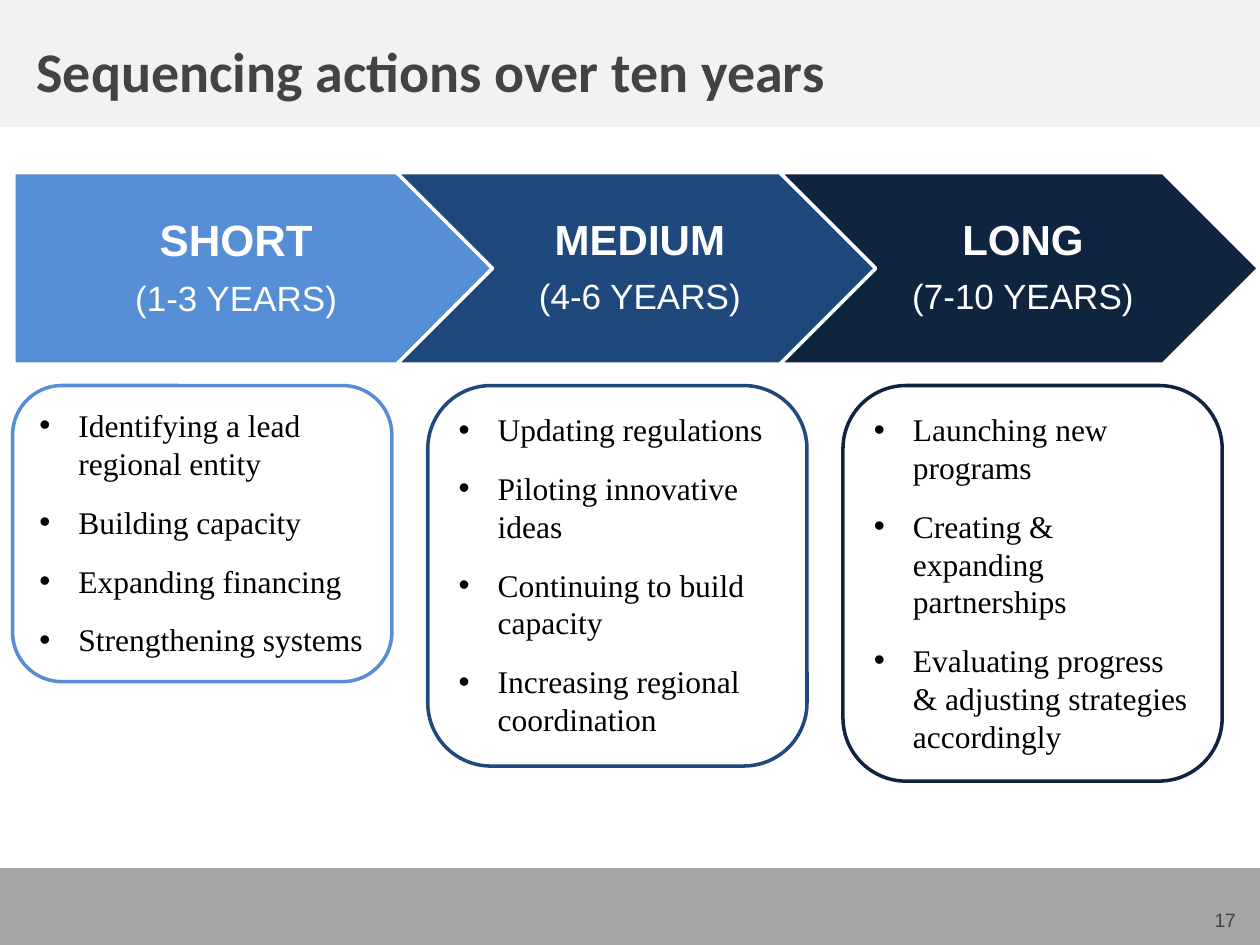
import pptx
import pptx.dml.color
import pptx.enum.shapes
import pptx.enum.text
import pptx.util
from lxml import etree
from pptx.oxml.ns import qn

Inches = pptx.util.Inches
Pt = pptx.util.Pt
Shape = pptx.enum.shapes.MSO_SHAPE
Anchor = pptx.enum.text.MSO_ANCHOR
Align = pptx.enum.text.PP_ALIGN
AutoSize = pptx.enum.text.MSO_AUTO_SIZE


def color(value):
    return pptx.dml.color.RGBColor.from_string(value)


class SlideBuilder:
    sans = "Arial"
    serif = "Times New Roman"
    heading = "Calibri"
    gray = "424342"
    white = "FFFFFF"

    def __init__(self, page):
        self.page = page

    def font(self, para, name, size, value, bold=False):
        for span in para.runs:
            span.font.name = name
            span.font.size = Pt(size)
            span.font.bold = bold
            span.font.color.rgb = color(value)

    def frame(self, box, anchor, insets=(0.1, 0.05, 0.1, 0.05)):
        frame = box.text_frame
        frame.word_wrap = True
        frame.auto_size = AutoSize.NONE
        frame.vertical_anchor = anchor
        (frame.margin_left, frame.margin_top,
         frame.margin_right, frame.margin_bottom) = map(Inches, insets)
        return frame

    def shape(self, kind, left, top, width, height, fill, line=None):
        box = self.page.shapes.add_shape(
            kind, Inches(left), Inches(top), Inches(width), Inches(height))
        box.shadow.inherit = False
        box.fill.solid()
        box.fill.fore_color.rgb = color(fill)
        if line:
            box.line.color.rgb = color(line)
            box.line.width = Pt(2)
        else:
            box.line.fill.background()
        return box

    def title(self, text, left, top, width, height):
        box = self.page.shapes.title
        box.left, box.top = Inches(left), Inches(top)
        box.width, box.height = Inches(width), Inches(height)
        frame = self.frame(box, Anchor.TOP, (0, 0, 0, 0))
        frame.text = text
        para = frame.paragraphs[0]
        para.alignment = Align.LEFT
        self.font(para, self.heading, 32, self.gray, True)
        box.element.getparent().append(box.element)

    def page_number(self, text, left, top, width, height):
        box = self.page.shapes.add_textbox(
            Inches(left), Inches(top), Inches(width), Inches(height))
        frame = self.frame(box, Anchor.BOTTOM, (0, 0, 0, 0))
        frame.text = text
        para = frame.paragraphs[0]
        para.alignment = Align.RIGHT
        self.font(para, self.sans, 11, self.gray)

    def phase(self, kind, left, fill, name, years, name_size, inset):
        box = self.shape(kind, left, 1.37, 3.8, 1.52, fill, self.white)
        frame = self.frame(box, Anchor.MIDDLE, (inset, 0.07, 0.04, 0.07))
        frame.text = f"{name}\n{years}"
        for para, size, bold in zip(frame.paragraphs, (name_size, 20), (True, False)):
            para.alignment = Align.CENTER
            para.line_spacing = 0.9
            para.space_after = Pt(size * 0.35)
            self.font(para, self.sans, size, self.white, bold)

    def card(self, left, height, line, actions):
        box = self.shape(Shape.ROUNDED_RECTANGLE, left, 3.06, 3.01, height, self.white, line)
        frame = self.frame(box, Anchor.TOP)
        frame.text = "\n".join(actions)
        for para in frame.paragraphs:
            para.alignment = Align.LEFT
            para.space_after = Pt(12)
            self.bullet(para)
            self.font(para, self.serif, 18, "000000")

    def bullet(self, para):
        properties = para._p.get_or_add_pPr()
        properties.set("marL", str(Inches(0.31)))
        properties.set("indent", str(-Inches(0.31)))
        etree.SubElement(properties, qn("a:buFont")).set("typeface", self.sans)
        etree.SubElement(properties, qn("a:buChar")).set("char", "•")


PHASES = [
    (Shape.PENTAGON, "558ED5", "SHORT", "(1-3 YEARS)", 25, 0.15, 2.35,
     ["Identifying a lead regional entity", "Building capacity",
      "Expanding financing", "Strengthening systems"]),
    (Shape.CHEVRON, "1F497D", "MEDIUM", "(4-6 YEARS)", 24, 0.1, 3.02,
     ["Updating regulations", "Piloting innovative ideas",
      "Continuing to build capacity", "Increasing regional coordination"]),
    (Shape.CHEVRON, "0F243E", "LONG", "(7-10 YEARS)", 24, 0.1, 3.14,
     ["Launching new programs", "Creating & expanding partnerships",
      "Evaluating progress & adjusting strategies accordingly"]),
]


def main():
    deck = pptx.Presentation()
    deck.slide_width, deck.slide_height = Inches(10), Inches(7.5)
    builder = SlideBuilder(deck.slides.add_slide(deck.slide_layouts[5]))
    builder.shape(Shape.RECTANGLE, 0, 6.89, 10, 0.61, "A6A6A6")
    builder.shape(Shape.RECTANGLE, 0, 0, 10, 1.01, "F2F2F2")
    builder.page_number("17", 7.48, 6.99, 2.33, 0.4)
    builder.title("Sequencing actions over ten years", 0.29, 0.29, 8.55, 0.54)
    for index, (kind, fill, name, years, size, inset, _, _) in enumerate(PHASES):
        builder.phase(kind, 0.11 + index * 3.04, fill, name, years, size, inset)
    for index, (_, line, _, _, _, _, height, actions) in enumerate(PHASES):
        builder.card(0.1 + index * 3.295, height, line, actions)
    deck.save("out.pptx")


if __name__ == "__main__":
    main()
